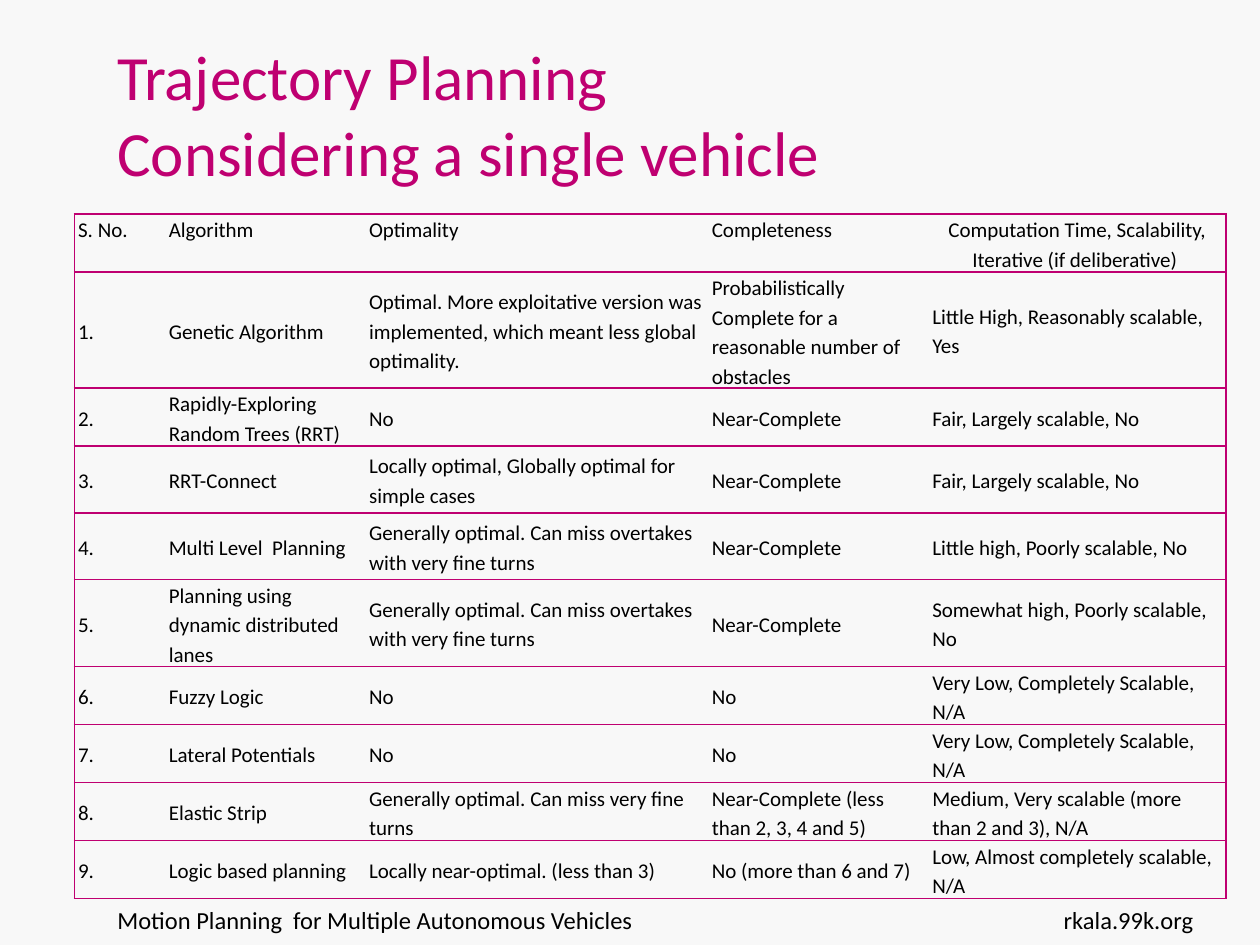
from dataclasses import dataclass

from lxml.etree import SubElement
from pptx import Presentation
from pptx.dml.color import RGBColor
from pptx.enum.text import MSO_ANCHOR, PP_ALIGN
from pptx.oxml.ns import qn
from pptx.util import Pt


@dataclass(frozen=True)
class Theme:
    font: str = "Calibri"
    background: RGBColor = RGBColor(0xF8, 0xF8, 0xF8)
    accent: RGBColor = RGBColor(0xBF, 0x00, 0x71)
    ink: RGBColor = RGBColor(0, 0, 0)
    title_size: float = 36
    footer_size: float = 14
    table_size: float = 12
    border: float = 1


THEME = Theme()
NO_GRID_STYLE = "{2D5ABB26-0587-4C30-8999-92F81FD0307C}"

COLUMN_WIDTHS = [51.84, 114.48, 195.84, 126, 169.92]
ROW_HEIGHTS = [30.24, 53.28, 23.04, 38.16, 38.16, 38.16, 23.04, 23.04, 30.24, 23.04]
HEADER = ["S. No.", "Algorithm", "Optimality", "Completeness",
          "Computation Time, Scalability, Iterative (if deliberative) "]
MISSES_OVERTAKES = "Generally optimal. Can miss overtakes with very fine turns"
ALGORITHMS = [
    ("Genetic Algorithm",
     "Optimal. More exploitative version was implemented, which meant less global optimality.",
     "Probabilistically Complete for a reasonable number of obstacles",
     "Little High, Reasonably scalable, Yes"),
    ("Rapidly-Exploring Random Trees (RRT)", "No", "Near-Complete",
     "Fair, Largely scalable, No"),
    ("RRT-Connect", "Locally optimal, Globally optimal for simple cases",
     "Near-Complete", "Fair, Largely scalable, No"),
    ("Multi Level  Planning", MISSES_OVERTAKES, "Near-Complete",
     "Little high, Poorly scalable, No"),
    ("Planning using dynamic distributed lanes", MISSES_OVERTAKES, "Near-Complete",
     "Somewhat high, Poorly scalable, No"),
    ("Fuzzy Logic", "No", "No", "Very Low, Completely Scalable, N/A"),
    ("Lateral Potentials", "No", "No", "Very Low, Completely Scalable, N/A"),
    ("Elastic Strip", "Generally optimal. Can miss very fine turns",
     "Near-Complete (less than 2, 3, 4 and 5)",
     "Medium, Very scalable (more than 2 and 3), N/A"),
    ("Logic based planning", "Locally near-optimal. (less than 3)",
     "No (more than 6 and 7)", "Low, Almost completely scalable, N/A"),
]


def style_runs(p, size, color):
    for r in p.runs:
        r.font.name = THEME.font
        r.font.size = Pt(size)
        r.font.color.rgb = color


def add_text(s, text, left, top, width, height, size, color,
             align=PP_ALIGN.LEFT, anchor=MSO_ANCHOR.TOP):
    sp = s.shapes.add_textbox(Pt(left), Pt(top), Pt(width), Pt(height))
    tf = sp.text_frame
    tf.word_wrap = True
    tf.vertical_anchor = anchor
    tf.text = text
    p = tf.paragraphs[0]
    p.alignment = align
    style_runs(p, size, color)


def add_borders(cell, sides):
    tc_pr = cell._tc.get_or_add_tcPr()
    for side in sides:
        ln = SubElement(tc_pr, qn(f"a:ln{side}"), w=str(Pt(THEME.border)))
        fill = SubElement(ln, qn("a:solidFill"))
        SubElement(fill, qn("a:srgbClr"), val=str(THEME.accent))


def fill_cell(cell, text, align, anchor, sides):
    cell.margin_left = cell.margin_right = Pt(2.16)
    cell.margin_top = cell.margin_bottom = 0
    cell.vertical_anchor = anchor
    add_borders(cell, sides)
    cell.fill.solid()
    cell.fill.fore_color.rgb = THEME.background
    cell.text_frame.text = text
    p = cell.text_frame.paragraphs[0]
    p.alignment = align
    p.line_spacing = 1.15
    style_runs(p, THEME.table_size, THEME.ink)


def add_comparison_table(s, left, top, width, height):
    rows = [HEADER] + [(f"{n}.", *row) for n, row in enumerate(ALGORITHMS, 1)]
    last = len(HEADER) - 1
    frame = s.shapes.add_table(len(rows), len(HEADER),
                               Pt(left), Pt(top), Pt(width), Pt(height))
    table = frame.table
    table.first_row = table.horz_banding = False
    table._tbl.tblPr.find(qn("a:tableStyleId")).text = NO_GRID_STYLE
    for column, w in zip(table.columns, COLUMN_WIDTHS):
        column.width = Pt(w)
    for row, h in zip(table.rows, ROW_HEIGHTS):
        row.height = Pt(h)
    frame.height = Pt(height)

    for i, row in enumerate(rows):
        for j, text in enumerate(row):
            align, anchor = PP_ALIGN.LEFT, MSO_ANCHOR.MIDDLE
            if i == 0:
                align = PP_ALIGN.CENTER if j == last else PP_ALIGN.JUSTIFY
                anchor = MSO_ANCHOR.TOP
            # Rules between rows, and a frame at the outer columns
            sides = {0: "LTB", last: "RTB"}.get(j, "TB")
            fill_cell(table.cell(i, j), text, align, anchor, sides)


def main():
    prs = Presentation()
    prs.slide_width, prs.slide_height = Pt(720), Pt(540)
    s = prs.slides.add_slide(prs.slide_layouts[6])
    s.background.fill.solid()
    s.background.fill.fore_color.rgb = THEME.background

    # Footer
    add_text(s, "Motion Planning  for Multiple Autonomous Vehicles",
             60, 513.5, 499, 37.5, THEME.footer_size, THEME.ink)
    add_text(s, "rkala.99k.org", 581, 513.5, 108, 37.5,
             THEME.footer_size, THEME.ink, PP_ALIGN.RIGHT)

    # Title
    add_text(s, "Trajectory Planning \vConsidering a single vehicle",
             60, 21.6, 487.5, 90, THEME.title_size, THEME.accent,
             anchor=MSO_ANCHOR.BOTTOM)

    # Comparison of algorithms
    add_comparison_table(s, 42.5, 122.4, 657.5, 391)

    prs.save("out.pptx")


if __name__ == "__main__":
    main()
